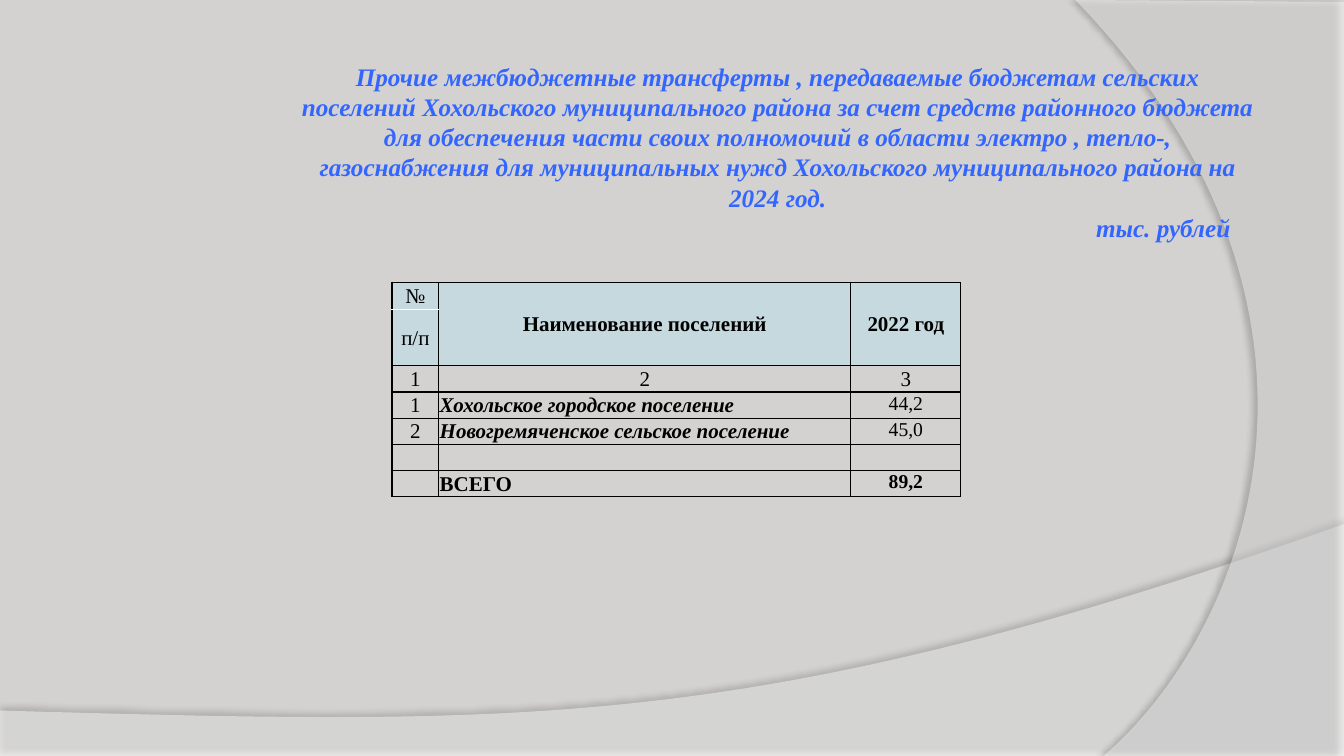
"""Build a slide with a table of budget transfers to settlements."""
from dataclasses import dataclass

from lxml import etree
from pptx import Presentation
from pptx.dml.color import RGBColor
from pptx.enum.text import MSO_ANCHOR, PP_ALIGN
from pptx.oxml.ns import qn
from pptx.util import Pt

CENTER, RIGHT, JUSTIFY = PP_ALIGN.CENTER, PP_ALIGN.RIGHT, PP_ALIGN.JUSTIFY
TOP, MIDDLE = MSO_ANCHOR.TOP, MSO_ANCHOR.MIDDLE
BACKGROUND = RGBColor(0xD4, 0xD2, 0xD0)
WHITE = RGBColor(0xFF, 0xFF, 0xFF)
BLACK = RGBColor(0, 0, 0)
BLUE = RGBColor(0x33, 0x66, 0xFF)
HEADER_FILL = RGBColor(0xC5, 0xD9, 0xDF)
FONT = "Times New Roman"
WIDTH, HEIGHT = 960, 540
CURVE_STEPS = 60

TITLE = (
    "Прочие межбюджетные трансферты , передаваемые бюджетам сельских поселений "
    "Хохольского муниципального района за счет средств районного бюджета для "
    "обеспечения части своих полномочий в области электро , тепло-, газоснабжения "
    "для муниципальных нужд Хохольского муниципального района на 2024 год."
)
COLUMN_WIDTHS = (33.4, 294.4, 78.6)
ROW_HEIGHTS = (19.4, 40.1) + (18.5,) * 5
ROWS = (
    ("№", "Наименование поселений", "2022 год"),
    ("п/п", "", ""),
    ("1", "2", "3"),
    ("1", "Хохольское городское поселение", "44,2"),
    ("2", "Новогремяченское сельское поселение", "45,0"),
    ("", "", ""),
    ("", "ВСЕГО", "89,2"),
)
HEADER_ROWS, FIRST_DATA_ROW, TOTAL_ROW = 2, 3, 6

Point = tuple[float, float]


@dataclass(frozen=True)
class Wave:
    """A translucent background sheet with one curved edge."""
    before: tuple[Point, ...]
    curve: tuple[Point, Point, Point, Point]
    opacity: int
    shadow_opacity: int
    shadow_distance: float
    shadow_angle: int


@dataclass(frozen=True)
class CellStyle:
    """Text style of a table cell."""
    size: float = 15
    bold: bool = False
    italic: bool = False
    align: PP_ALIGN = CENTER
    anchor: MSO_ANCHOR = MIDDLE


WAVES = (
    Wave(((0, 507.6), (0, HEIGHT), (WIDTH, HEIGHT)),
         ((WIDTH, 374.4), (536.4, 524.9), (375.1, 517.7), (0, 507.6)), 45, 35, 3.5, 270),
    Wave(((WIDTH, 1.4), (WIDTH, HEIGHT)),
         ((788.4, HEIGHT), (897.1, 445.7), (977, 216), (768.2, 0)), 40, 45, 4, 180),
)


def bezier(curve: tuple[Point, Point, Point, Point], t: float) -> Point:
    """Return the point of a cubic curve at t."""
    weights = ((1 - t) ** 3, 3 * t * (1 - t) ** 2, 3 * t * t * (1 - t), t ** 3)
    return (sum(w * p[0] for w, p in zip(weights, curve)),
            sum(w * p[1] for w, p in zip(weights, curve)))


def add_color(parent: etree._Element, color: RGBColor, opacity: int) -> None:
    """Append a colour with an opacity in percent."""
    element = etree.SubElement(parent, qn("a:srgbClr"), val=str(color))
    etree.SubElement(element, qn("a:alpha"), val=str(opacity * 1000))


def draw_wave(slide, wave: Wave) -> None:
    """Draw a sheet with its soft shadow."""
    points = list(wave.before)
    points += [bezier(wave.curve, step / CURVE_STEPS) for step in range(CURVE_STEPS + 1)]
    (x, y), *rest = [(Pt(x), Pt(y)) for x, y in points]
    builder = slide.shapes.build_freeform(x, y)
    builder.add_line_segments(rest, close=True)
    shape = builder.convert_to_shape()
    shape.line.fill.background()
    shape.fill.solid()
    shape.fill.fore_color.rgb = WHITE
    properties = shape._element.spPr
    solid = properties.find(qn("a:solidFill"))
    solid.clear()
    add_color(solid, WHITE, wave.opacity)
    shape.shadow.inherit = False
    shadow = etree.SubElement(
        properties.find(qn("a:effectLst")), qn("a:outerShdw"), blurRad=str(Pt(4)),
        dist=str(Pt(wave.shadow_distance)), dir=str(wave.shadow_angle * 60000),
        algn="ctr", rotWithShape="0")
    add_color(shadow, BLACK, wave.shadow_opacity)


def format_paragraph(paragraph, color: RGBColor, style: CellStyle) -> None:
    """Apply alignment and font to a paragraph."""
    paragraph.alignment = style.align
    for run in paragraph.runs:
        run.font.name = FONT
        run.font.size = Pt(style.size)
        run.font.bold = style.bold
        run.font.italic = style.italic
        run.font.color.rgb = color
    if not paragraph.runs:
        etree.SubElement(paragraph._p, qn("a:endParaRPr"), sz=str(int(style.size * 100)))


def draw_heading(slide, text: str, left: float, top: float, width: float,
                 height: float, align: PP_ALIGN) -> None:
    """Draw blue italic heading text."""
    box = slide.shapes.add_textbox(Pt(left), Pt(top), Pt(width), Pt(height))
    frame = box.text_frame
    frame.word_wrap = True
    frame.text = text
    format_paragraph(frame.paragraphs[0], BLUE, CellStyle(18, True, True, align))


def cell_style(row: int, column: int) -> CellStyle:
    """Choose the text style for a table position."""
    if row < HEADER_ROWS:
        return CellStyle(bold=column > 0)
    if row < FIRST_DATA_ROW or column == 0:
        return CellStyle()
    total = row == TOTAL_ROW
    if column == 1:
        return CellStyle(bold=True, italic=not total, align=JUSTIFY)
    return CellStyle(size=14, bold=total, anchor=TOP)


def draw_borders(cell, sides: str) -> None:
    """Add black one-point lines on the named sides."""
    properties = cell._tc.get_or_add_tcPr()
    for index, side in enumerate(sides):
        line = etree.Element(qn(f"a:ln{side}"), w=str(Pt(1)))
        solid = etree.SubElement(line, qn("a:solidFill"))
        etree.SubElement(solid, qn("a:srgbClr"), val=str(BLACK))
        properties.insert(index, line)


def draw_table(slide) -> None:
    """Draw the settlements table."""
    frame = slide.shapes.add_table(
        len(ROWS), len(COLUMN_WIDTHS), Pt(280), Pt(201.8),
        Pt(sum(COLUMN_WIDTHS)), Pt(sum(ROW_HEIGHTS)))
    table = frame.table
    table.first_row = table.horz_banding = False
    for column, width in zip(table.columns, COLUMN_WIDTHS):
        column.width = Pt(width)
    for row, height in zip(table.rows, ROW_HEIGHTS):
        row.height = Pt(height)
    for column in (1, 2):
        table.cell(0, column).merge(table.cell(1, column))
    for row, texts in enumerate(ROWS):
        for column, text in enumerate(texts):
            cell = table.cell(row, column)
            style = cell_style(row, column)
            cell.text = text
            cell.vertical_anchor = style.anchor
            cell.margin_left = cell.margin_right = cell.margin_top = Pt(0.7)
            cell.margin_bottom = Pt(0)
            format_paragraph(cell.text_frame.paragraphs[0], BLACK, style)
            if row < HEADER_ROWS:
                cell.fill.solid()
                cell.fill.fore_color.rgb = HEADER_FILL
            else:
                cell.fill.background()
            sides = {(0, 0): "LRT", (1, 0): "LRB"}.get((row, column), "LRTB")
            draw_borders(cell, sides)


def main() -> None:
    """Build and save the presentation."""
    presentation = Presentation()
    presentation.slide_width, presentation.slide_height = Pt(WIDTH), Pt(HEIGHT)
    slide = presentation.slides.add_slide(presentation.slide_layouts[6])
    slide.background.fill.solid()
    slide.background.fill.fore_color.rgb = BACKGROUND
    for wave in WAVES:
        draw_wave(slide, wave)
    draw_heading(slide, TITLE, 204.5, 40, 702, 115, CENTER)
    draw_heading(slide, "тыс. рублей", 756, 148, 130, 29, RIGHT)
    draw_table(slide)
    presentation.save("out.pptx")


if __name__ == "__main__":
    main()
